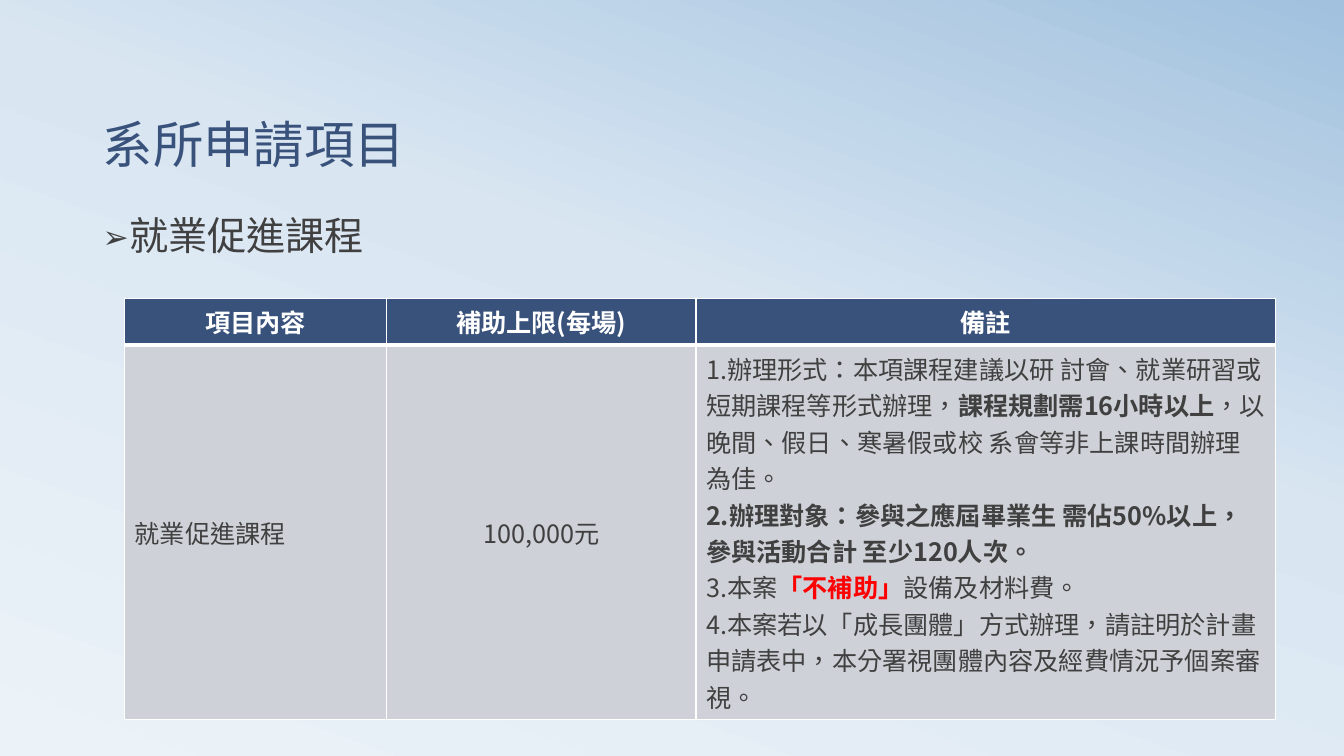
from lxml.etree import SubElement
from pptx import Presentation
from pptx.dml.color import RGBColor
from pptx.enum.text import MSO_ANCHOR as Anchor, PP_ALIGN as Align
from pptx.oxml import parse_xml
from pptx.oxml.ns import nsdecls, qn
from pptx.util import Cm, Pt

FONT = "Noto Sans CJK SC"
NAVY = RGBColor(0x39, 0x52, 0x7B)
INK = RGBColor(0x40, 0x40, 0x40)
WHITE = RGBColor(0xFF, 0xFF, 0xFF)
RED = RGBColor(0xFF, 0x00, 0x00)
GREY = RGBColor(0xCE, 0xD1, 0xD7)
SKY = [(0, RGBColor(0xEC, 0xF3, 0xF8)), (58, RGBColor(0xD9, 0xE6, 0xF2)),
       (100, RGBColor(0xA1, 0xC1, 0xDE))]
SKY_ANGLE = 290

PLAIN = {"size": Pt(18), "bold": False, "color": INK}
BOLD = {**PLAIN, "bold": True}
ALERT = {**BOLD, "color": RED}
HEAD = {**BOLD, "color": WHITE}
TITLE = {"size": Pt(36), "color": NAVY}
TOPIC = {"size": Pt(28), "color": INK}

# Every paragraph is a list of (text, format) runs.
title = [("系所申請項目", TITLE)]
topic = [("就業促進課程", TOPIC)]
headers = ["項目內容", "補助上限(每場)", "備註"]
notes = [
    [("1.辦理形式：本項課程建議以研 討會、就業研習或短期課程等形式辦理，", PLAIN),
     ("課程規劃需16小時以上", BOLD),
     ("，以晚間、假日、寒暑假或校 系會等非上課時間辦理為佳。", PLAIN)],
    [("2.辦理對象：參與之應屆畢業生 需佔50%以上，參與活動合計 至少120人次。", BOLD)],
    [("3.本案", PLAIN), ("「不補助」", ALERT), ("設備及材料費。", PLAIN)],
    [("4.本案若以「成長團體」方式辦理，請註明於計畫申請表中，"
      "本分署視團體內容及經費情況予個案審視。", PLAIN)],
]
# Every cell is (paragraphs, alignment, anchor).
rows = [
    [([[(h, HEAD)]], Align.CENTER, Anchor.TOP) for h in headers],
    [([[("就業促進課程", PLAIN)]], Align.LEFT, Anchor.MIDDLE),
     ([[("100,000元", PLAIN)]], Align.CENTER, Anchor.MIDDLE),
     (notes, Align.LEFT, Anchor.TOP)],
]
row_fills = [NAVY, GREY]
row_borders = [{"L": 1, "R": 1, "T": 1, "B": 3}, {"L": 1, "R": 1, "B": 1}]

TITLE_BOX = Cm(2.34), Cm(1.52), Cm(30.48), Cm(2.97)
TOPIC_BOX = Cm(2.34), Cm(5.33), Cm(28.58), Cm(11.63)
TABLE_LEFT, TABLE_TOP = Cm(3.14), Cm(7.52)
COL_WIDTHS = [Cm(6.6), Cm(7.8), Cm(14.61)]
ROW_HEIGHTS = [Cm(1.17), Cm(9.45)]


def paint_background(s):
    stops = "".join(f'<a:gs pos="{pos * 1000}"><a:srgbClr val="{color}"/></a:gs>'
                    for pos, color in SKY)
    s._element.cSld.insert(0, parse_xml(
        f'<p:bg {nsdecls("p", "a")}><p:bgPr><a:gradFill rotWithShape="1">'
        f'<a:gsLst>{stops}</a:gsLst><a:lin ang="{SKY_ANGLE * 60000}" scaled="0"/>'
        '</a:gradFill><a:effectLst/></p:bgPr></p:bg>'))


def add_runs(p, runs):
    for text, fmt in runs:
        r = p.add_run()
        r.text = text
        r.font.name = FONT
        for name, value in fmt.items():
            if name == "color":
                r.font.color.rgb = value
            else:
                setattr(r.font, name, value)
        rPr = r._r.get_or_add_rPr()
        rPr.set("lang", "zh-TW")
        SubElement(rPr, qn("a:ea"), typeface=FONT)


def fill_text(tf, paragraphs, **fmt):
    for i, runs in enumerate(paragraphs):
        p = tf.add_paragraph() if i else tf.paragraphs[0]
        for name, value in fmt.items():
            setattr(p, name, value)
        add_runs(p, runs)


def add_text(s, box, runs, anchor, **fmt):
    tf = s.shapes.add_textbox(*box).text_frame
    tf.word_wrap = True
    tf.vertical_anchor = anchor
    fill_text(tf, [runs], **fmt)
    return tf.paragraphs[0]


def add_bullet(p, char, color, percent, indent):
    pPr = p._p.get_or_add_pPr()
    pPr.set("marL", str(indent))
    pPr.set("indent", str(-indent))
    SubElement(SubElement(pPr, qn("a:buClr")), qn("a:srgbClr"), val=str(color))
    SubElement(pPr, qn("a:buSzPct"), val=str(percent * 1000))
    SubElement(pPr, qn("a:buFont"), typeface=FONT)
    SubElement(pPr, qn("a:buChar"), char=char)


def set_borders(cell, widths):
    tcPr = cell._tc.get_or_add_tcPr()
    for i, (side, width) in enumerate(widths.items()):
        tcPr.insert(i, parse_xml(
            f'<a:ln{side} {nsdecls("a")} w="{Pt(width)}"><a:solidFill>'
            f'<a:srgbClr val="{WHITE}"/></a:solidFill></a:ln{side}>'))


def add_grant_table(s):
    table = s.shapes.add_table(len(rows), len(headers), TABLE_LEFT, TABLE_TOP,
                               sum(COL_WIDTHS), sum(ROW_HEIGHTS)).table
    for col, width in zip(table.columns, COL_WIDTHS):
        col.width = width
    for i, row in enumerate(rows):
        table.rows[i].height = ROW_HEIGHTS[i]
        for j, (paragraphs, align, anchor) in enumerate(row):
            cell = table.cell(i, j)
            cell.fill.solid()
            cell.fill.fore_color.rgb = row_fills[i]
            cell.vertical_anchor = anchor
            set_borders(cell, row_borders[i])
            fill_text(cell.text_frame, paragraphs, alignment=align)


def main():
    prs = Presentation()
    prs.slide_width, prs.slide_height = Cm(33.87), Cm(19.05)
    s = prs.slides.add_slide(prs.slide_layouts[6])
    paint_background(s)
    add_text(s, TITLE_BOX, title, Anchor.BOTTOM, line_spacing=0.8)
    p = add_text(s, TOPIC_BOX, topic, Anchor.TOP,
                 line_spacing=0.9, space_before=Pt(18))
    add_bullet(p, "➢", INK, 80, Cm(0.64))
    add_grant_table(s)
    prs.save("out.pptx")


if __name__ == "__main__":
    main()
